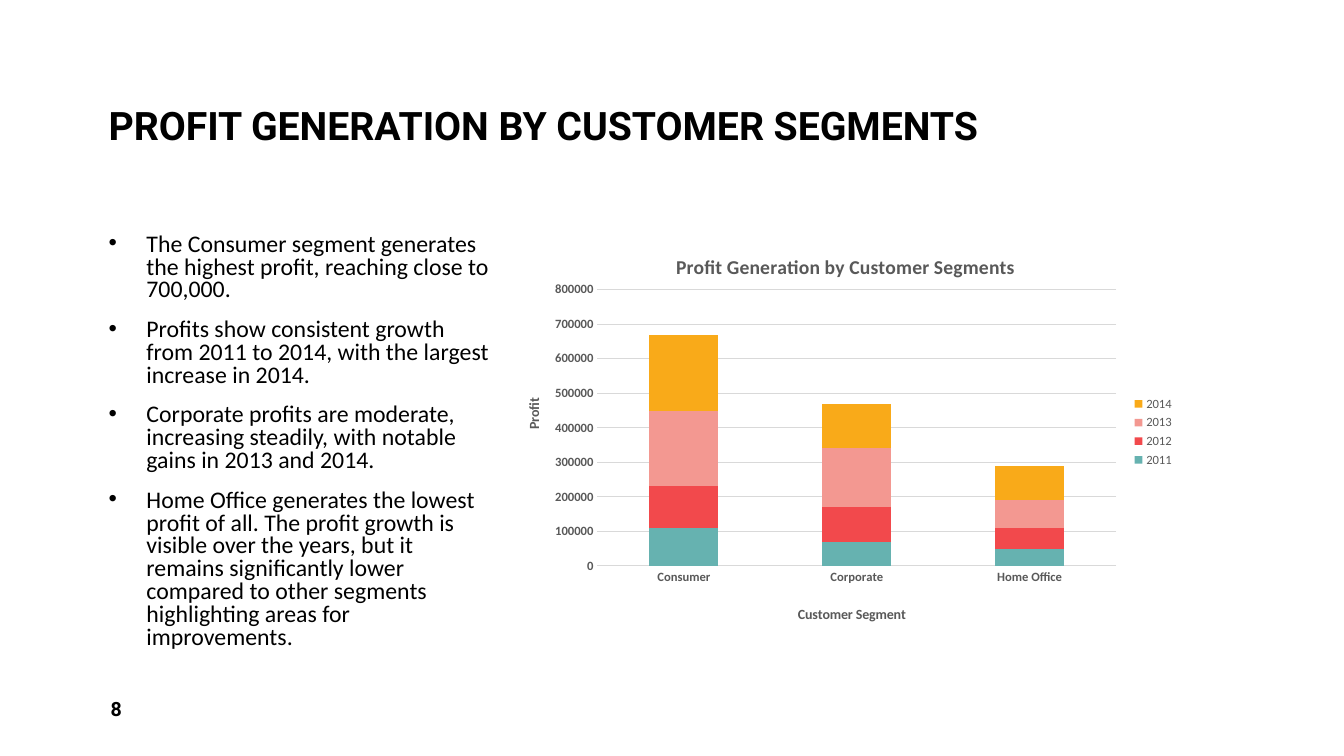
import lxml.etree
import pptx
import pptx.chart.data
import pptx.dml.color
import pptx.enum.chart
import pptx.enum.text
import pptx.oxml.ns
import pptx.util

Pt = pptx.util.Pt
RGBColor = pptx.dml.color.RGBColor
qn = pptx.oxml.ns.qn
ANCHOR = pptx.enum.text.MSO_ANCHOR

BLACK = RGBColor(0x00, 0x00, 0x00)
GRAY = RGBColor(0x59, 0x59, 0x59)
GRID = RGBColor(0xD9, 0xD9, 0xD9)
TEAL = RGBColor(0x66, 0xB2, 0xB0)
RED = RGBColor(0xF2, 0x49, 0x4C)
PINK = RGBColor(0xF3, 0x98, 0x91)
AMBER = RGBColor(0xF9, 0xAA, 0x19)

HEADING = {"name": "Roboto", "size": Pt(28), "bold": True}
BODY = {"name": "Calibri", "size": Pt(17)}
NUMBER = {"name": "Roboto", "size": Pt(14), "bold": True}
CHART_TITLE = {"name": "Calibri", "size": Pt(14), "bold": True}
AXIS_TITLE = {"name": "Calibri", "size": Pt(10), "bold": True}
TICKS = {"name": "Calibri", "size": Pt(9), "bold": True}
LEGEND = {"name": "Calibri", "size": Pt(9), "bold": False}

FINDINGS = [
    "The Consumer segment generates the highest profit, reaching close to 700,000.",
    "Profits show consistent growth from 2011 to 2014, with the largest increase in 2014.",
    "Corporate profits are moderate, increasing steadily, with notable gains in 2013 and 2014.",
    "Home Office generates the lowest profit of all. The profit growth is visible over the "
    "years, but it remains significantly lower compared to other segments highlighting "
    "areas for improvements.",
]
SEGMENTS = ["Consumer", "Corporate", "Home Office"]
PROFITS = [
    ("2011", (110000, 70000, 50000), TEAL),
    ("2012", (120000, 100000, 60000), RED),
    ("2013", (220000, 170000, 80000), PINK),
    ("2014", (220000, 130000, 100000), AMBER),
]


def set_font(font, fmt, color):
    for name, value in fmt.items():
        setattr(font, name, value)
    font.color.rgb = color


def add_bullet(p, indent):
    pPr = p._p.get_or_add_pPr()
    pPr.set("marL", str(indent))
    pPr.set("indent", str(-indent))
    lxml.etree.SubElement(pPr, qn("a:buFont")).set("typeface", "Arial")
    lxml.etree.SubElement(pPr, qn("a:buChar")).set("char", "•")


def add_text(slide, box, lines, fmt, anchor=ANCHOR.TOP, para=None, bullets=False):
    tf = slide.shapes.add_textbox(*map(Pt, box)).text_frame
    tf.word_wrap = True
    tf.vertical_anchor = anchor
    for i, line in enumerate(lines):
        p = tf.add_paragraph() if i else tf.paragraphs[0]
        for name, value in (para or {}).items():
            setattr(p, name, value)
        if bullets:
            add_bullet(p, Pt(27))
        r = p.add_run()
        r.text = line
        set_font(r.font, fmt, BLACK)


def place(element, index, **fractions):
    """Give a chart part a fixed place, as fractions of the chart."""
    for old in element.findall(qn("c:layout")):
        element.remove(old)
    layout = lxml.etree.Element(qn("c:layout"))
    element.insert(index, layout)
    manual = lxml.etree.SubElement(layout, qn("c:manualLayout"))
    if "w" in fractions:
        lxml.etree.SubElement(manual, qn("c:layoutTarget")).set("val", "inner")
    for key in "xy":
        lxml.etree.SubElement(manual, qn(f"c:{key}Mode")).set("val", "edge")
    for key, value in fractions.items():
        lxml.etree.SubElement(manual, qn(f"c:{key}")).set("val", str(value))


def set_title(title, text, fmt, x, y, rotation=0):
    tf = title.text_frame
    tf.text = text
    set_font(tf.paragraphs[0].runs[0].font, fmt, GRAY)
    body = title._element.find(".//" + qn("a:bodyPr"))
    body.set("rot", str(rotation * 60000))
    body.set("vert", "horz")
    place(title._element, 1, x=x, y=y)


def style_axis(axis):
    axis.major_tick_mark = pptx.enum.chart.XL_TICK_MARK.NONE
    axis.minor_tick_mark = pptx.enum.chart.XL_TICK_MARK.NONE
    set_font(axis.tick_labels.font, TICKS, GRAY)


def style_line(line):
    line.color.rgb = GRID
    line.width = Pt(0.75)


def add_profit_chart(slide, box):
    data = pptx.chart.data.CategoryChartData()
    data.categories = SEGMENTS
    for year, values, _ in PROFITS:
        data.add_series(year, values)
    kind = pptx.enum.chart.XL_CHART_TYPE.COLUMN_STACKED
    chart = slide.shapes.add_chart(kind, *map(Pt, box), data).chart
    set_font(chart.font, {"name": "Calibri", "size": Pt(10)}, BLACK)

    # Columns
    plot = chart.plots[0]
    plot.gap_width, plot.overlap = 150, 100
    plot.vary_by_categories = False
    for series, (_, _, color) in zip(plot.series, PROFITS):
        series.format.fill.solid()
        series.format.fill.fore_color.rgb = color
    place(chart._chartSpace.chart.plotArea, 0, x=0.14, y=0.15, w=0.76, h=0.68)

    # Axes
    cat, val = chart.category_axis, chart.value_axis
    style_axis(cat)
    style_axis(val)
    style_line(cat.format.line)
    style_line(val.major_gridlines.format.line)
    val.format.line.fill.background()
    val.minimum_scale, val.maximum_scale, val.major_unit = 0, 800000, 100000

    # Titles and legend
    set_title(chart.chart_title, "Profit Generation by Customer Segments", CHART_TITLE, 0.25, 0.05)
    set_title(cat.axis_title, "Customer Segment", AXIS_TITLE, 0.43, 0.92)
    set_title(val.axis_title, "Profit", AXIS_TITLE, 0.03, 0.41, rotation=-90)
    chart.has_legend = True
    chart.legend.position = pptx.enum.chart.XL_LEGEND_POSITION.RIGHT
    chart.legend.include_in_layout = False
    set_font(chart.legend.font, LEGEND, GRAY)


def main():
    prs = pptx.Presentation()
    prs.slide_width, prs.slide_height = Pt(960), Pt(540)
    slide = prs.slides.add_slide(prs.slide_layouts[6])

    # Heading
    add_text(slide, (70.5, 6, 819, 104), ["PROFIT GENERATION BY CUSTOMER SEGMENTS"],
             HEADING, ANCHOR.BOTTOM, {"line_spacing": 0.9})
    # Findings
    add_text(slide, (70.5, 163.5, 289, 315), FINDINGS, BODY,
             para={"line_spacing": 0.8, "space_after": Pt(12)}, bullets=True)
    # Chart
    add_profit_chart(slide, (358.5, 163.5, 487.5, 290))
    # Slide number
    add_text(slide, (72, 492, 210, 29), ["8"], NUMBER, ANCHOR.MIDDLE)

    prs.save("out.pptx")


if __name__ == "__main__":
    main()
